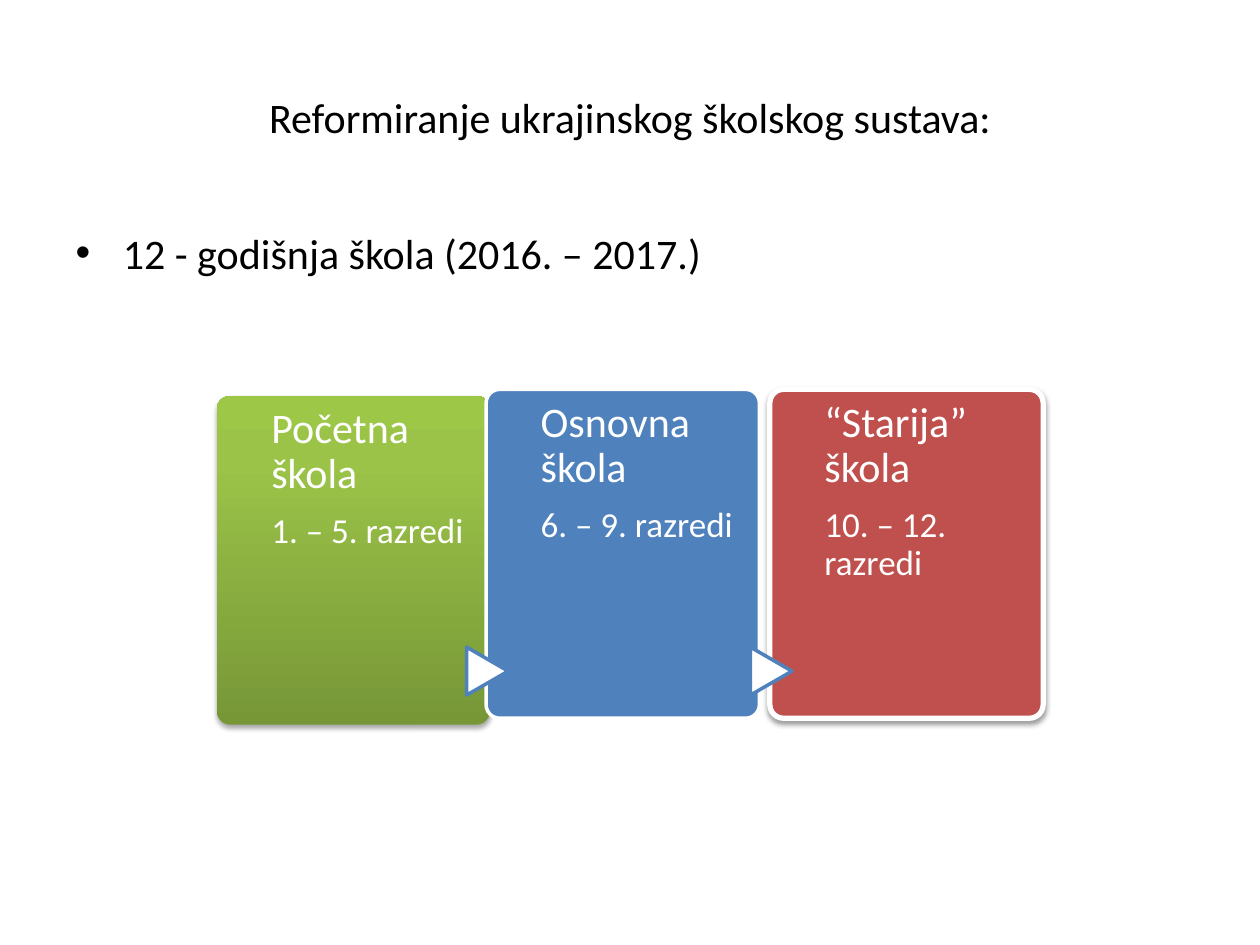
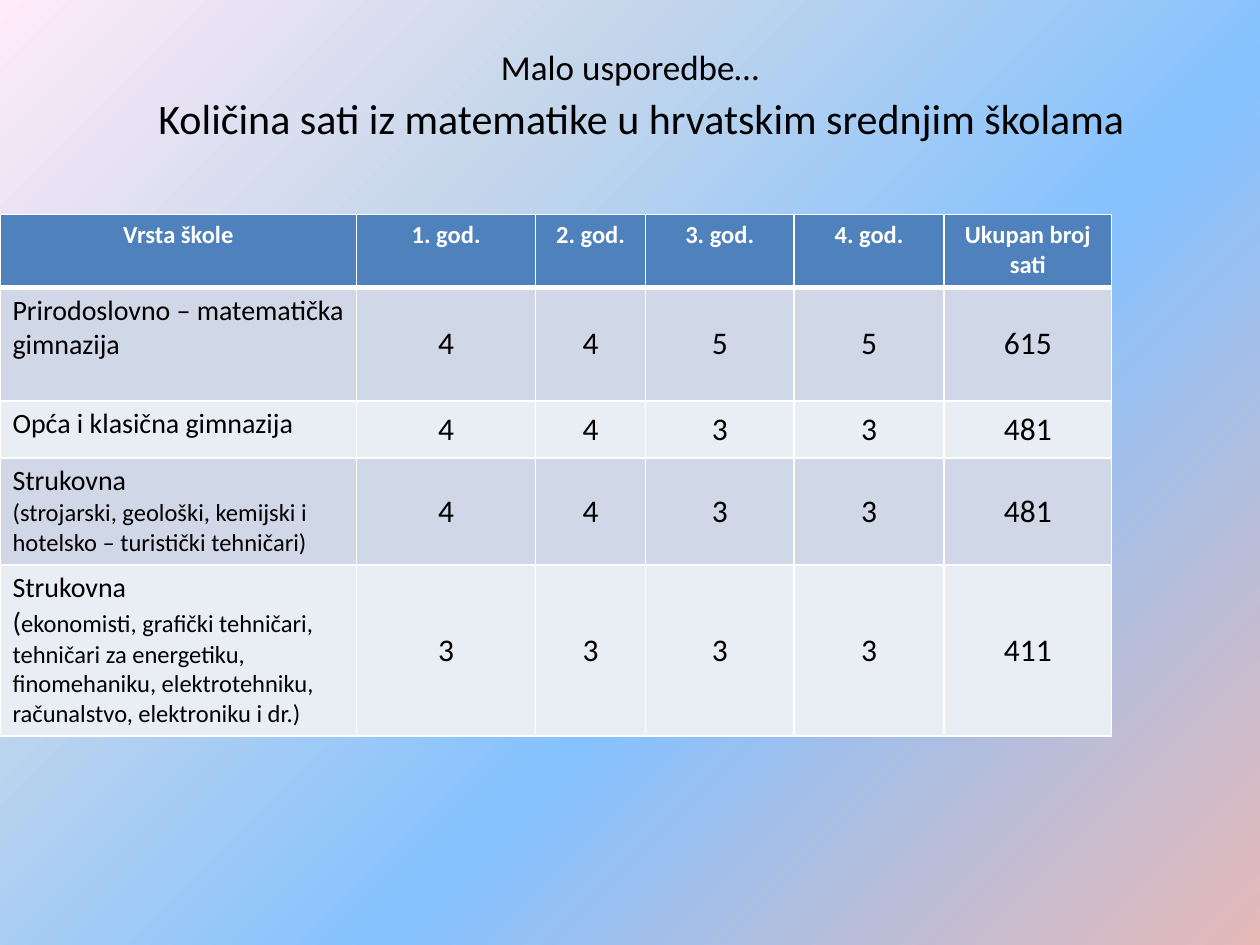
from dataclasses import dataclass

from lxml.etree import SubElement
from pptx import Presentation
from pptx.dml.color import RGBColor
from pptx.enum.shapes import MSO_SHAPE
from pptx.enum.text import MSO_ANCHOR, MSO_AUTO_SIZE, PP_ALIGN
from pptx.oxml.ns import qn
from pptx.util import Cm, Pt


@dataclass(frozen=True)
class Theme:
    font: str = "Calibri"
    black: str = "000000"
    white: str = "FFFFFF"
    blue: str = "4F81BD"
    red: str = "C0504D"
    green: tuple = ((0, "779737"), (80, "9BC348"), (100, "9DC746"))
    sky: tuple = ((0, "FFEBFA"), (30, "C4D6EB"), (60, "85C2FF"), (100, "E6B9B8"))
    bands: tuple = ("D0D8E8", "E9EDF4")
    heading: int = 24
    sub: int = 20
    number: int = 18
    label: int = 16
    small: int = 14


T = Theme()

REFORM = dict(
    title=("Reformiranje ukrajinskog školskog sustava:", T.heading, (1.27, 0.76, 22.86, 3.18)),
    body=("12 - godišnja škola (2016. – 2017.)", T.heading, (1.27, 4.45, 22.86, 4.67)),
)
COMPARISON = dict(
    title=("Malo usporedbe…", T.sub, (1.27, 0.76, 22.86, 1.17)),
    body=("Količina sati iz matematike u hrvatskim srednjim školama", T.heading,
          (1.5, 1.73, 22.86, 1.68)),
)

# name, grades, left, top, fill, line width (pt), shadow opacity (%)
STAGES = [
    ("Početna škola", "1. – 5. razredi", 4.37, 7.98, T.green, 0, 35),
    ("Osnovna škola", "6. – 9. razredi", 9.8, 7.85, T.blue, 2, 0),
    ("“Starija” škola", "10. – 12. razredi", 15.52, 7.85, T.red, 3, 38),
]
STAGE_W, STAGE_H = 5.51, 6.63
STAGE_TEXT_DX, STAGE_TEXT_W = 1.1, 4.11
ARROW_DX, ARROW_DY, ARROW_W, ARROW_H = -0.46, 5.26, 0.97, 0.84

HEADER = ["Vrsta škole", "1. god.", "2. god.", "3. god.", "4. god.", "Ukupan broj sati"]
# paragraphs of (text, size) runs, then the hours
SCHOOLS = [
    ([[("Prirodoslovno – matematička gimnazija", T.label)]], [4, 4, 5, 5, 615]),
    ([[("Opća i klasična gimnazija", T.label)]], [4, 4, 3, 3, 481]),
    ([[("Strukovna", T.label)],
      [("(strojarski, geološki, kemijski i hotelsko – turistički tehničari)", T.small)]],
     [4, 4, 3, 3, 481]),
    ([[("Strukovna", T.label)],
      [("(", T.label),
       ("ekonomisti, grafički tehničari, tehničari za energetiku, finomehaniku, "
        "elektrotehniku, računalstvo, elektroniku i dr.)", T.small)]],
     [3, 3, 3, 3, 411]),
]
COL_WIDTHS = [7.19, 3.61, 2.21, 3, 3.02, 3.38]
ROW_HEIGHTS = [1.47, 2.29, 1.15, 2.16, 3.45]
TABLE_TOP = 4.32


def rgb(color):
    return RGBColor.from_string(color)


def cms(*values):
    return [Cm(v) for v in values]


def write(tf, paragraphs, color=T.black, align=None, bold=False):
    """Fill a text frame with paragraphs, each a list of (text, size) runs."""
    for i, runs in enumerate(paragraphs):
        p = tf.paragraphs[0] if i == 0 else tf.add_paragraph()
        p.alignment = align
        for text, size in runs:
            r = p.add_run()
            r.text = text
            r.font.name, r.font.size, r.font.bold = T.font, Pt(size), bold
            r.font.color.rgb = rgb(color)


def paint_gradient(fill, element, stops, angle):
    """Set a linear gradient; the angle runs counter-clockwise."""
    fill.gradient()
    fill.gradient_angle = angle
    gs_list = element.find(".//" + qn("a:gsLst"))
    for gs in list(gs_list):
        gs_list.remove(gs)
    for pos, color in stops:
        gs = SubElement(gs_list, qn("a:gs"), pos=str(pos * 1000))
        SubElement(gs, qn("a:srgbClr"), val=color)


def style_shape(s, fill, line, width):
    s.shadow.inherit = False
    if isinstance(fill, tuple):
        paint_gradient(s.fill, s._element, fill, 90)
    else:
        s.fill.solid()
        s.fill.fore_color.rgb = rgb(fill)
    if width:
        s.line.color.rgb = rgb(line)
        s.line.width = Pt(width)
    else:
        s.line.fill.background()


def drop_shadow(s, opacity):
    effects = s._element.spPr.find(qn("a:effectLst"))
    shadow = SubElement(effects, qn("a:outerShdw"), blurRad=str(Pt(3.1)),
                        dist=str(Pt(1.7)), dir="5400000", rotWithShape="0")
    color = SubElement(shadow, qn("a:srgbClr"), val=T.black)
    SubElement(color, qn("a:alpha"), val=str(opacity * 1000))


def add_slide(prs, content):
    """Add a slide with its title and body placeholders filled and placed."""
    slide = prs.slides.add_slide(prs.slide_layouts[1])
    for sp, part in zip(slide.placeholders, ("title", "body")):
        text, size, box = content[part]
        sp.left, sp.top, sp.width, sp.height = cms(*box)
        tf = sp.text_frame
        tf.auto_size = MSO_AUTO_SIZE.NONE
        write(tf, [[(text, size)]], align=PP_ALIGN.CENTER if part == "title" else None)
    return slide


def add_stages(slide):
    shapes = slide.shapes.add_group_shape().shapes
    for i, (name, grades, left, top, fill, width, opacity) in enumerate(STAGES):
        card = shapes.add_shape(MSO_SHAPE.ROUNDED_RECTANGLE, *cms(left, top, STAGE_W, STAGE_H))
        card.adjustments[0] = 0.05
        style_shape(card, fill, T.white, width)
        if opacity:
            drop_shadow(card, opacity)
        if i:
            arrow = shapes.add_shape(MSO_SHAPE.FLOWCHART_EXTRACT, *cms(
                left + ARROW_DX, top + ARROW_DY, ARROW_W, ARROW_H))
            arrow.rotation = 90
            style_shape(arrow, T.white, T.blue, 2)
        tf = shapes.add_textbox(*cms(left + STAGE_TEXT_DX, top, STAGE_TEXT_W, STAGE_H)).text_frame
        tf.word_wrap = True
        tf.margin_left = tf.margin_right = tf.margin_bottom = 0
        tf.margin_top = Cm(0.23)
        write(tf, [[(name, T.heading)], [(grades, T.sub)]], T.white)
        for p in tf.paragraphs:
            p.line_spacing = 0.9
            p.space_after = Pt(9)


def style_cell(cell, fill, bottom=1):
    tc_pr = cell._tc.get_or_add_tcPr()
    for side, width in (("L", 1), ("R", 1), ("T", 1), ("B", bottom)):
        ln = SubElement(tc_pr, qn("a:ln" + side), w=str(Pt(width)))
        SubElement(SubElement(ln, qn("a:solidFill")), qn("a:srgbClr"), val=T.white)
    cell.fill.solid()
    cell.fill.fore_color.rgb = rgb(fill)


def add_hours_table(slide):
    table = slide.shapes.add_table(
        len(ROW_HEIGHTS), len(COL_WIDTHS),
        *cms(0, TABLE_TOP, sum(COL_WIDTHS), sum(ROW_HEIGHTS))).table
    for col, width in zip(table.columns, COL_WIDTHS):
        col.width = Cm(width)
    for row, height in zip(table.rows, ROW_HEIGHTS):
        row.height = Cm(height)
    for c, text in enumerate(HEADER):
        cell = table.cell(0, c)
        style_cell(cell, T.blue, bottom=3)
        write(cell.text_frame, [[(text, T.small)]], T.white, PP_ALIGN.CENTER, bold=True)
    for r, (school, hours) in enumerate(SCHOOLS, 1):
        band = T.bands[(r - 1) % 2]
        cell = table.cell(r, 0)
        style_cell(cell, band)
        write(cell.text_frame, school)
        for c, value in enumerate(hours, 1):
            cell = table.cell(r, c)
            style_cell(cell, band)
            cell.vertical_anchor = MSO_ANCHOR.MIDDLE
            write(cell.text_frame, [[(str(value), T.number)]], align=PP_ALIGN.CENTER)


def main():
    prs = Presentation()
    prs.slide_width, prs.slide_height = cms(25.4, 19.05)

    add_stages(add_slide(prs, REFORM))

    slide = add_slide(prs, COMPARISON)
    paint_gradient(slide.background.fill, slide._element, T.sky, 315)
    p = slide.placeholders[1].text_frame.paragraphs[0]
    p.alignment = PP_ALIGN.CENTER
    SubElement(p._p.get_or_add_pPr(), qn("a:buNone"))
    add_hours_table(slide)

    prs.save("out.pptx")


if __name__ == "__main__":
    main()
